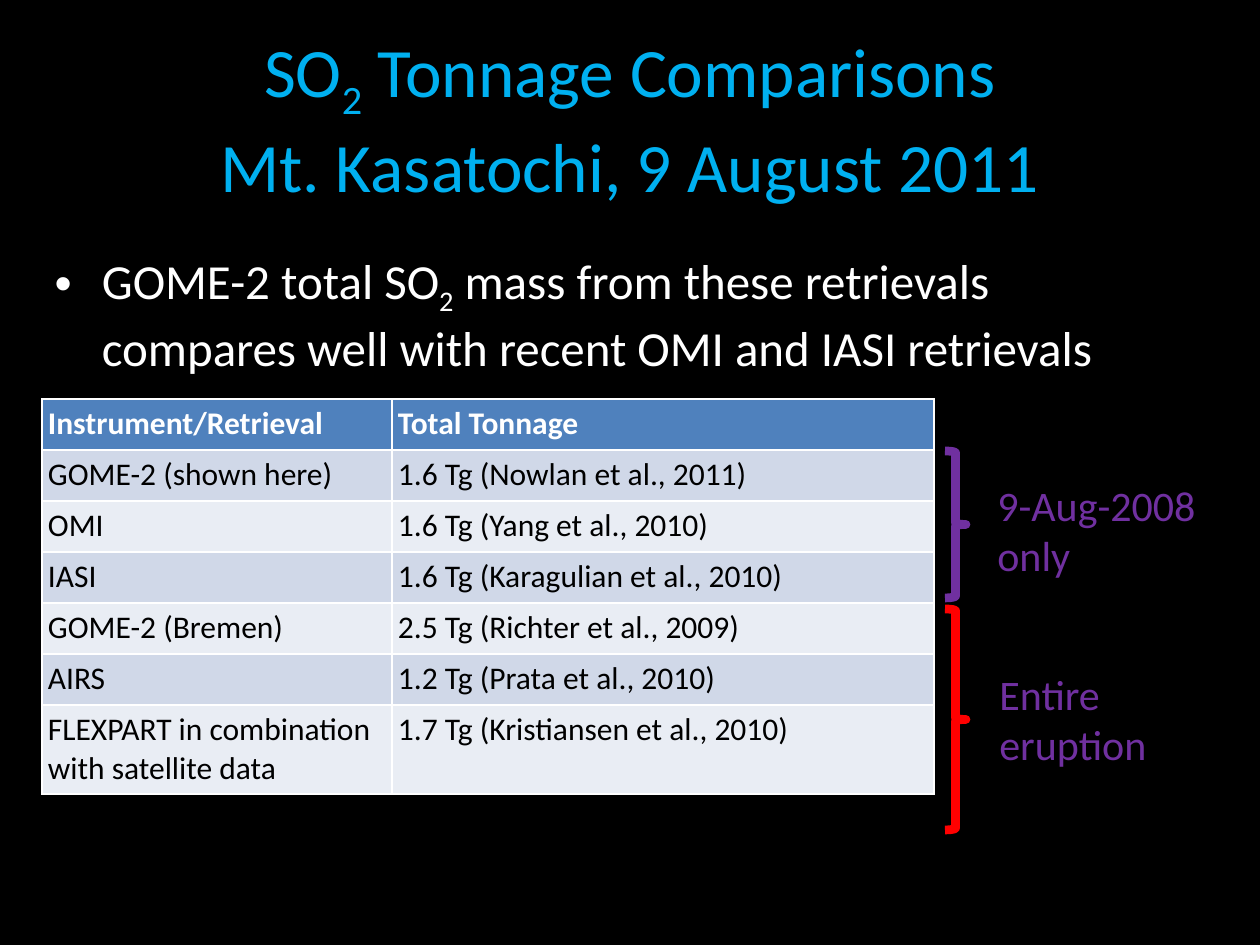
import pptx
import pptx.dml.color
import pptx.enum.shapes
import pptx.enum.text
import pptx.util

PX = 914400 // 126
FONT = "Calibri"
COLORS = {
    "background": "000000", "title": "00B0F0", "white": "FFFFFF", "black": "000000",
    "header": "4F81BD", "band_dark": "D0D8E8", "band_light": "E9EDF4",
    "purple": "7030A0", "red": "FF0000",
}


def rgb(name):
    return pptx.dml.color.RGBColor.from_string(COLORS[name])


def set_font(para, size, color, bold=False):
    para.font.name = FONT
    para.font.size = pptx.util.Pt(size)
    para.font.bold = bold
    para.font.color.rgb = rgb(color)


deck = pptx.Presentation()
deck.slide_width = pptx.util.Inches(10)
deck.slide_height = pptx.util.Inches(7.5)
page = deck.slides.add_slide(deck.slide_layouts[1])
page.background.fill.solid()
page.background.fill.fore_color.rgb = rgb("background")

# Title and bullet, each with a subscript 2
title, body = page.placeholders
headings = [
    (title, (63, 38, 1134, 158), 39.6, "title",
     "SO", " Tonnage Comparisons\vMt. Kasatochi, 9 August 2011"),
    (body, (42, 244, 1155, 249), 28, "white",
     "GOME-2 total SO",
     " mass from these retrievals compares well with recent OMI and IASI retrievals"),
]
for box, place, size, color, before, after in headings:
    box.left, box.top, box.width, box.height = [n * PX for n in place]
    box.text_frame.auto_size = pptx.enum.text.MSO_AUTO_SIZE.NONE
    para = box.text_frame.paragraphs[0]
    para.add_run().text = before
    subscript = para.add_run()
    subscript.text = "2"
    subscript.font._element.set("baseline", "-25000")
    for index, line in enumerate(after.split("\v")):
        if index:
            para.add_line_break()
        para.add_run().text = line
    set_font(para, size, color)

# Tonnage table
rows = [
    ("Instrument/Retrieval", "Total Tonnage"),
    ("GOME-2 (shown here)", "1.6 Tg (Nowlan et al., 2011)"),
    ("OMI", "1.6 Tg (Yang et al., 2010)"),
    ("IASI", "1.6 Tg (Karagulian et al., 2010)"),
    ("GOME-2 (Bremen)", "2.5 Tg (Richter et al., 2009)"),
    ("AIRS", "1.2 Tg (Prata et al., 2010)"),
    ("FLEXPART in combination with satellite data", "1.7 Tg (Kristiansen et al., 2010)"),
]
widths = (350, 542)
row_height = 51
table = page.shapes.add_table(len(rows), len(widths), 42 * PX, 399 * PX,
                              sum(widths) * PX, len(rows) * row_height * PX).table
for column, width in zip(table.columns, widths):
    column.width = width * PX
for index, texts in enumerate(rows):
    table.rows[index].height = row_height * PX
    fill = "header" if index == 0 else "band_dark" if index % 2 else "band_light"
    for column, text in enumerate(texts):
        cell = table.cell(index, column)
        cell.text = text
        cell.margin_left = cell.margin_right = 6 * PX
        cell.margin_top = cell.margin_bottom = 6 * PX
        cell.fill.solid()
        cell.fill.fore_color.rgb = rgb(fill)
        set_font(cell.text_frame.paragraphs[0], 18,
                 "black" if index else "white", bold=index == 0)

# Braces grouping the rows, with their labels
groups = [
    ("9-Aug-2008 only", "purple", 451, 147, 985, 473),
    ("Entire eruption", "red", 609, 221, 987, 662),
]
for text, color, top, height, label_left, label_top in groups:
    brace = page.shapes.add_shape(pptx.enum.shapes.MSO_SHAPE.RIGHT_BRACE,
                                  945 * PX, top * PX, 21 * PX, height * PX)
    brace.shadow.inherit = False
    brace.fill.background()
    brace.line.color.rgb = rgb(color)
    brace.line.width = pptx.util.Pt(5)

    label = page.shapes.add_textbox(label_left * PX, label_top * PX, 255 * PX, 115 * PX)
    label.text_frame.word_wrap = True
    label.text_frame.auto_size = pptx.enum.text.MSO_AUTO_SIZE.SHAPE_TO_FIT_TEXT
    label.text_frame.text = text
    set_font(label.text_frame.paragraphs[0], 24, "purple")

deck.save("out.pptx")
